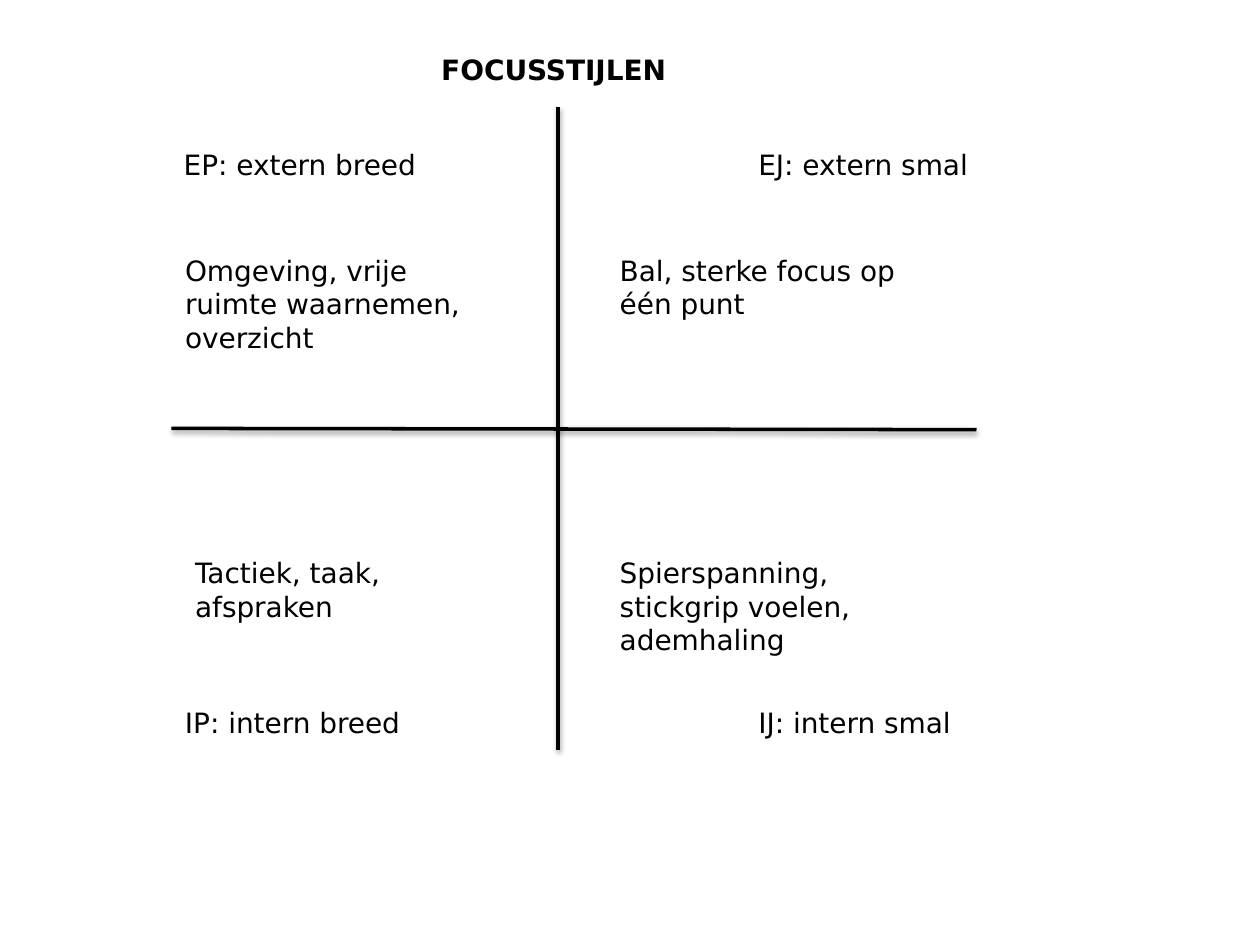
from dataclasses import dataclass

from lxml import etree
from pptx import Presentation
from pptx.dml.color import RGBColor
from pptx.enum.shapes import MSO_CONNECTOR
from pptx.enum.text import MSO_ANCHOR, MSO_AUTO_SIZE, PP_ALIGN
from pptx.oxml.ns import qn
from pptx.util import Inches, Pt

STRAIGHT = MSO_CONNECTOR.STRAIGHT
TOP = MSO_ANCHOR.TOP
GROW = MSO_AUTO_SIZE.SHAPE_TO_FIT_TEXT
LEFT, CENTER = PP_ALIGN.LEFT, PP_ALIGN.CENTER
TITLE_ONLY = 5


@dataclass(frozen=True)
class Theme:
    font: str = "DejaVu Sans"
    size: int = 16
    ink: str = "000000"
    axis_width: float = 2


THEME = Theme()
INK = RGBColor.from_string(THEME.ink)

TITLE = "FOCUSSTIJLEN"
TITLE_AREA = (3.22, 0.37, 2.35, 0.37)
AXES = [((4.43, 0.85), (4.43, 5.95)), ((1.36, 3.4), (7.75, 3.41))]

# Rows of the quadrant grid, in inches from the top
NAME_ROWS = {"extern": 1.12, "intern": 5.55}
DETAIL_ROWS = {"extern": 1.96, "intern": 4.36}
LINE_HEIGHT, PADDING = 0.27, 0.1

# Row, text, left, width, number of lines
NAMES = [
    ("extern", "EP: extern breed", 1.36, 2.44, 1),
    ("extern", "EJ: extern smal", 5.92, 1.99, 1),
    ("intern", "IP: intern breed", 1.37, 2.33, 1),
    ("intern", "IJ: intern smal", 5.92, 1.99, 1),
]
DETAILS = [
    ("extern", "Omgeving, vrije ruimte waarnemen, overzicht", 1.37, 2.71, 3),
    ("extern", "Bal, sterke focus op één punt", 4.82, 2.78, 2),
    ("intern", "Tactiek, taak, afspraken", 1.45, 2.35, 2),
    ("intern", "Spierspanning, stickgrip voelen, ademhaling", 4.82, 2.35, 3),
]


def write(box, text, align=LEFT, bold=False):
    frame = box.text_frame
    frame.word_wrap = True
    frame.auto_size = GROW
    frame.vertical_anchor = TOP
    para = frame.paragraphs[0]
    para.alignment = align
    span = para.add_run()
    span.text = text
    span.font.name = THEME.font
    span.font.size = Pt(THEME.size)
    span.font.bold = bold
    span.font.color.rgb = INK


def add_axis(page, start, end):
    points = [Inches(value) for value in start + end]
    axis = page.shapes.add_connector(STRAIGHT, *points)
    axis.line.color.rgb = INK
    axis.line.width = Pt(THEME.axis_width)
    effects = etree.SubElement(axis._element.spPr, qn("a:effectLst"))
    shadow = etree.SubElement(
        effects, qn("a:outerShdw"), blurRad=str(Pt(3.1)), dist=str(Pt(1.6)),
        dir="5400000", rotWithShape="0")
    color = etree.SubElement(shadow, qn("a:srgbClr"), val=THEME.ink)
    etree.SubElement(color, qn("a:alpha"), val="38000")


def add_quadrant_texts(page, entries, rows):
    for row, text, left, width, lines in entries:
        area = (left, rows[row], width, lines * LINE_HEIGHT + PADDING)
        write(page.shapes.add_textbox(*map(Inches, area)), text)


def main():
    deck = Presentation()
    deck.slide_width, deck.slide_height = Inches(10), Inches(7.5)
    page = deck.slides.add_slide(deck.slide_layouts[TITLE_ONLY])

    for start, end in AXES:
        add_axis(page, start, end)

    title = page.shapes.title
    title.left, title.top, title.width, title.height = map(Inches, TITLE_AREA)
    write(title, TITLE, CENTER, bold=True)

    add_quadrant_texts(page, DETAILS, DETAIL_ROWS)
    add_quadrant_texts(page, NAMES, NAME_ROWS)
    deck.save("out.pptx")


if __name__ == "__main__":
    main()
